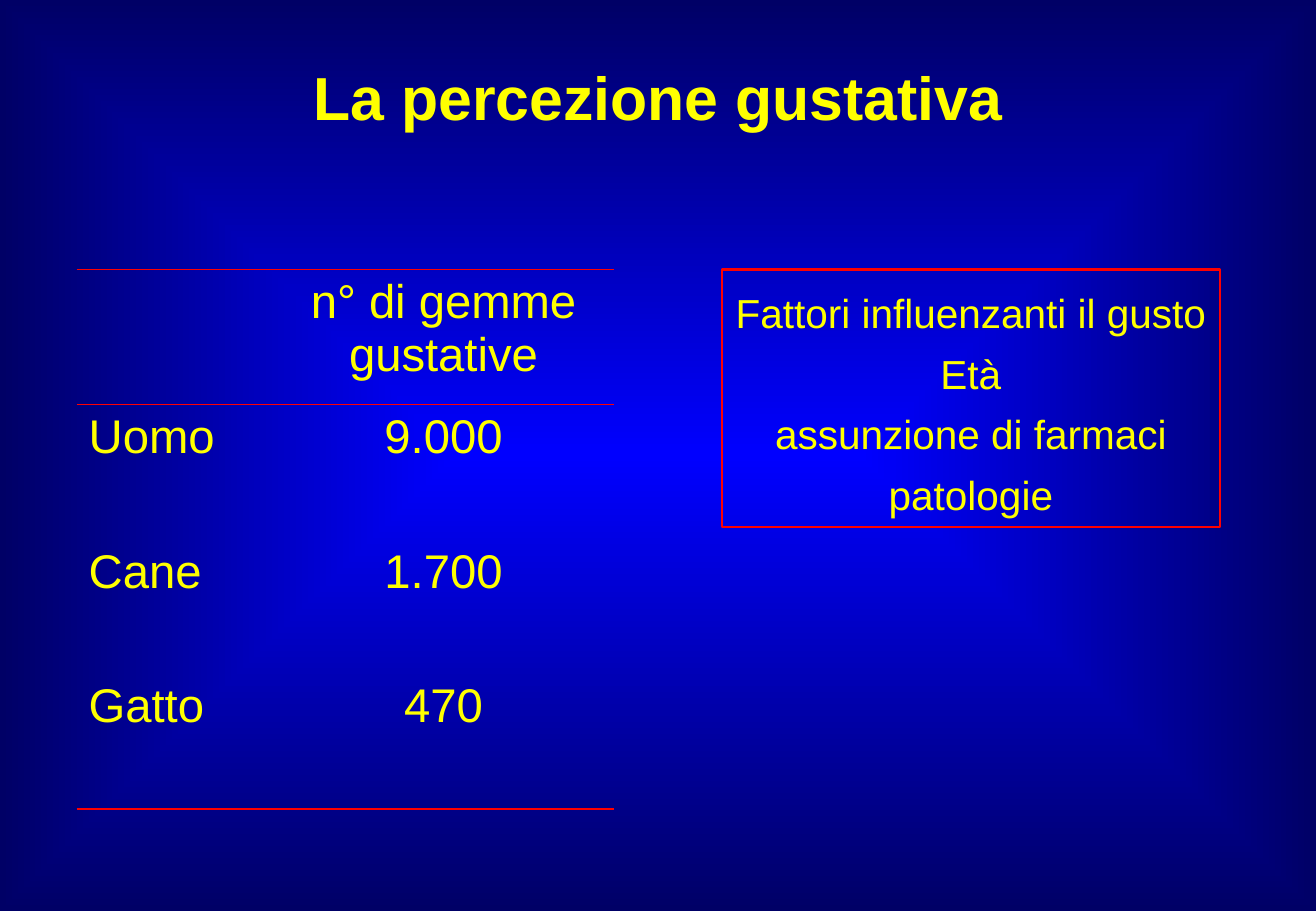
import pptx
import pptx.dml.color
import pptx.enum.shapes
import pptx.enum.text
import pptx.oxml
import pptx.oxml.ns
import pptx.util
from pptx.util import Inches

COLOURS = {"text": "FFFF00", "rule": "FF0000", "centre": "0000FF", "edge": "000066"}
FONT = "Arial"
NO_STYLE = "{2D5ABB26-0587-4C30-8999-92F81FD0307C}"
NAMESPACE = pptx.oxml.ns.nsdecls("a")
CENTRE = pptx.enum.text.PP_ALIGN.CENTER
LEFT = pptx.enum.text.PP_ALIGN.LEFT
TASTE_BUDS = [
    ("", "n° di gemme gustative"),
    ("Uomo", "9.000"),
    ("Cane", "1.700"),
    ("Gatto", "470"),
]
FACTORS = ["Fattori influenzanti il gusto", "Età", "assunzione di farmaci", "patologie"]


def colour(name):
    return pptx.dml.color.RGBColor.from_string(COLOURS[name])


def write(para, text, size, align, bold=False):
    para.alignment = align
    span = para.add_run()
    span.text = text
    span.font.name = FONT
    span.font.size = pptx.util.Pt(size)
    span.font.bold = bold
    span.font.color.rgb = colour("text")


def paint_background(page):
    fill = page.background.fill
    fill.gradient()
    for stop, position, name in zip(fill.gradient_stops, (0, 1), ("centre", "edge")):
        stop.position = position
        stop.color.rgb = colour(name)
    linear = page.element.find(".//" + pptx.oxml.ns.qn("a:lin"))
    linear.getparent().replace(linear, pptx.oxml.parse_xml(
        f'<a:path {NAMESPACE} path="shape">'
        '<a:fillToRect l="50000" t="50000" r="50000" b="50000"/></a:path>'))


def add_title(page, text):
    title = page.shapes.title
    title.left, title.top = Inches(0.18), Inches(0.17)
    title.width, title.height = Inches(10.47), Inches(1.25)
    title.text_frame.vertical_anchor = pptx.enum.text.MSO_ANCHOR.MIDDLE
    write(title.text_frame.paragraphs[0], text, 36, CENTRE, bold=True)


def set_borders(cell, ruled):
    cell.fill.background()
    properties = cell._tc.get_or_add_tcPr()
    for index, side in enumerate("LRTB"):
        paint = "<a:noFill/>"
        if side in ruled:
            paint = f'<a:solidFill><a:srgbClr val="{COLOURS["rule"]}"/></a:solidFill>'
        properties.insert(index, pptx.oxml.parse_xml(
            f'<a:ln{side} {NAMESPACE} w="{pptx.util.Pt(1)}">{paint}</a:ln{side}>'))


def add_taste_table(page):
    frame = page.shapes.add_table(len(TASTE_BUDS), 2, Inches(0.63), Inches(2.22),
                                  Inches(4.42), Inches(4.44))
    table = frame.table
    table.first_row = table.horz_banding = False
    table._tbl.tblPr.find(pptx.oxml.ns.qn("a:tableStyleId")).text = NO_STYLE
    for column, width in zip(table.columns, (1.62, 2.8)):
        column.width = Inches(width)
    ruled_sides = {0: "TB", 1: "T", len(TASTE_BUDS) - 1: "B"}
    for row, texts in enumerate(TASTE_BUDS):
        for column, (text, align) in enumerate(zip(texts, (LEFT, CENTRE))):
            cell = table.cell(row, column)
            set_borders(cell, ruled_sides.get(row, ""))
            if text:
                write(cell.text_frame.paragraphs[0], text, 28, align)


def add_factor_box(page):
    box = page.shapes.add_shape(pptx.enum.shapes.MSO_SHAPE.RECTANGLE, Inches(5.94),
                                Inches(2.22), Inches(4.1), Inches(2.12))
    box.shadow.inherit = False
    box.fill.background()
    box.line.color.rgb = colour("rule")
    box.line.width = pptx.util.Pt(1.5)
    frame = box.text_frame
    frame.word_wrap = False
    frame.auto_size = pptx.enum.text.MSO_AUTO_SIZE.SHAPE_TO_FIT_TEXT
    frame.vertical_anchor = pptx.enum.text.MSO_ANCHOR.TOP
    for index, text in enumerate(FACTORS):
        para = frame.add_paragraph() if index else frame.paragraphs[0]
        para.line_spacing = 1.25
        write(para, text, 24, CENTRE)


def main():
    """Build the slide on taste perception."""
    deck = pptx.Presentation()
    deck.slide_width, deck.slide_height = Inches(10.83), Inches(7.5)
    page = deck.slides.add_slide(deck.slide_layouts.get_by_name("Title Only"))
    paint_background(page)
    add_title(page, "La percezione gustativa")
    add_taste_table(page)
    add_factor_box(page)
    deck.save("out.pptx")


if __name__ == "__main__":
    main()
